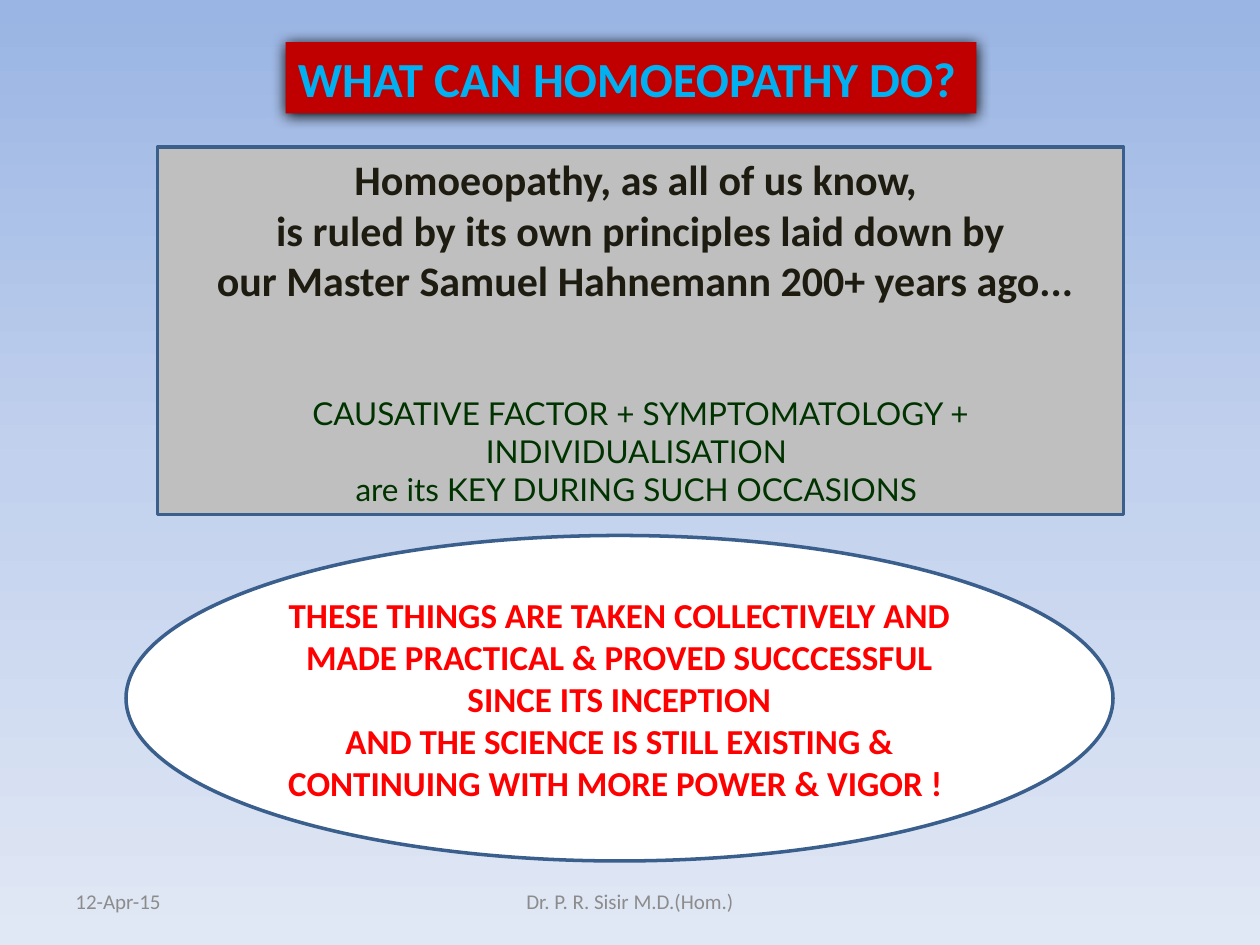
import copy

import pptx
import pptx.util
import pptx.dml.color
import pptx.enum.shapes
import pptx.enum.text
import pptx.oxml
import pptx.oxml.ns

Pt = pptx.util.Pt
SHAPE = pptx.enum.shapes.MSO_SHAPE
ALIGN = pptx.enum.text.PP_ALIGN
ANCHOR = pptx.enum.text.MSO_ANCHOR

COLORS = {
    "sky": "9AB5E4", "haze": "C2D1ED", "mist": "E1E8F5",
    "red": "C00000", "cyan": "00B0F0", "grey": "BFBFBF", "navy": "3A5F8C",
    "ink": "1E1C11", "green": "003300", "white": "FFFFFF",
    "bright_red": "FF0000", "footer": "8C8C8C",
}
COLUMNS, ROWS = 120, 90

SHADOW = (
    '<a:effectLst xmlns:a="http://schemas.openxmlformats.org/drawingml/2006/main">'
    '<a:outerShdw blurRad="107950" dist="12700" dir="5400000" algn="ctr" rotWithShape="0">'
    '<a:srgbClr val="000000"/></a:outerShdw></a:effectLst>'
)


def rgb(name):
    return pptx.dml.color.RGBColor.from_string(COLORS[name])


class Deck:
    def __init__(self, width, height):
        self.prs = pptx.Presentation()
        self.prs.slide_width = pptx.util.Inches(width)
        self.prs.slide_height = pptx.util.Inches(height)
        self.s = self.prs.slides.add_slide(self.prs.slide_layouts[6])

    def box(self, col, row, cols, rows):
        """Turn grid columns and rows into left, top, width, height."""
        dx = self.prs.slide_width / COLUMNS
        dy = self.prs.slide_height / ROWS
        return [round(v) for v in (col * dx, row * dy, cols * dx, rows * dy)]

    def background(self, *names):
        """Fill the slide from top to bottom with evenly spaced colours."""
        fill = self.s.background.fill
        fill.gradient()
        fill.gradient_angle = 270
        stops = self.s.element.find(".//" + pptx.oxml.ns.qn("a:gsLst"))
        while len(stops) < len(names):
            stops.append(copy.deepcopy(stops[-1]))
        for i, (stop, name) in enumerate(zip(fill.gradient_stops, names)):
            stop.color.rgb = rgb(name)
            stop.position = i / (len(names) - 1)

    def add_lines(self, sp, lines, size, color, font="Calibri", bold=False,
                  align=ALIGN.CENTER, before=0):
        """Add lines below any text already in the shape."""
        tf = sp.text_frame
        tf.word_wrap = True
        tf.vertical_anchor = ANCHOR.MIDDLE
        for i, line in enumerate(lines):
            p = tf.add_paragraph() if tf.text else tf.paragraphs[0]
            p.text = line
            p.alignment = align
            p.space_before = Pt(before if i == 0 else 0)
            p.font.size = Pt(size)
            p.font.name = font
            p.font.bold = bold
            p.font.color.rgb = rgb(color)

    def shape(self, kind, cell, fill, line=None):
        sp = self.s.shapes.add_shape(kind, *self.box(*cell))
        sp.shadow.inherit = False
        sp.fill.solid()
        sp.fill.fore_color.rgb = rgb(fill)
        if line:
            sp.line.color.rgb = rgb(line)
            sp.line.width = Pt(2)
        else:
            sp.line.fill.background()
        return sp

    def banner(self, cell, text):
        sp = self.shape(SHAPE.RECTANGLE, cell, "red")
        effects = sp.element.find(".//" + pptx.oxml.ns.qn("a:effectLst"))
        effects.getparent().replace(effects, pptx.oxml.parse_xml(SHADOW))
        self.add_lines(sp, [text], 28, "cyan", bold=True, align=ALIGN.LEFT)
        tf = sp.text_frame
        tf.word_wrap = False
        tf.vertical_anchor = ANCHOR.TOP
        tf.auto_size = pptx.enum.text.MSO_AUTO_SIZE.SHAPE_TO_FIT_TEXT

    def footer(self, cell, text, align):
        sp = self.s.shapes.add_textbox(*self.box(*cell))
        self.add_lines(sp, [text], 12, "footer", align=align)


def main():
    deck = Deck(10, 7.5)
    deck.background("sky", "haze", "mist")
    deck.footer((6, 83.4, 28, 4.8), "12-Apr-15", ALIGN.LEFT)
    deck.footer((41, 83.4, 38, 4.8), "Dr. P. R. Sisir M.D.(Hom.)", ALIGN.CENTER)
    deck.banner((27.2, 4, 65.8, 6.8), "WHAT CAN HOMOEOPATHY DO?")

    principles = deck.shape(SHAPE.RECTANGLE, (15, 14, 92, 35), "grey", "navy")
    deck.add_lines(principles, [
        "Homoeopathy, as all of us know, ",
        "is ruled by its own principles laid down by",
        " our Master Samuel Hahnemann 200+ years ago...",
    ], 24, "ink", bold=True)
    deck.add_lines(principles, [
        "CAUSATIVE FACTOR + SYMPTOMATOLOGY + INDIVIDUALISATION ",
        "are its KEY DURING SUCH OCCASIONS ",
    ], 18, "green", font="Lato", before=51)

    outcome = deck.shape(SHAPE.OVAL, (12, 51, 94, 31), "white", "navy")
    deck.add_lines(outcome, [
        "THESE THINGS ARE TAKEN COLLECTIVELY AND MADE PRACTICAL & PROVED SUCCCESSFUL",
        " SINCE ITS INCEPTION ",
        "AND THE SCIENCE IS STILL EXISTING & CONTINUING WITH MORE POWER & VIGOR ! ",
    ], 20, "bright_red", bold=True)
    deck.prs.save("out.pptx")


if __name__ == "__main__":
    main()
